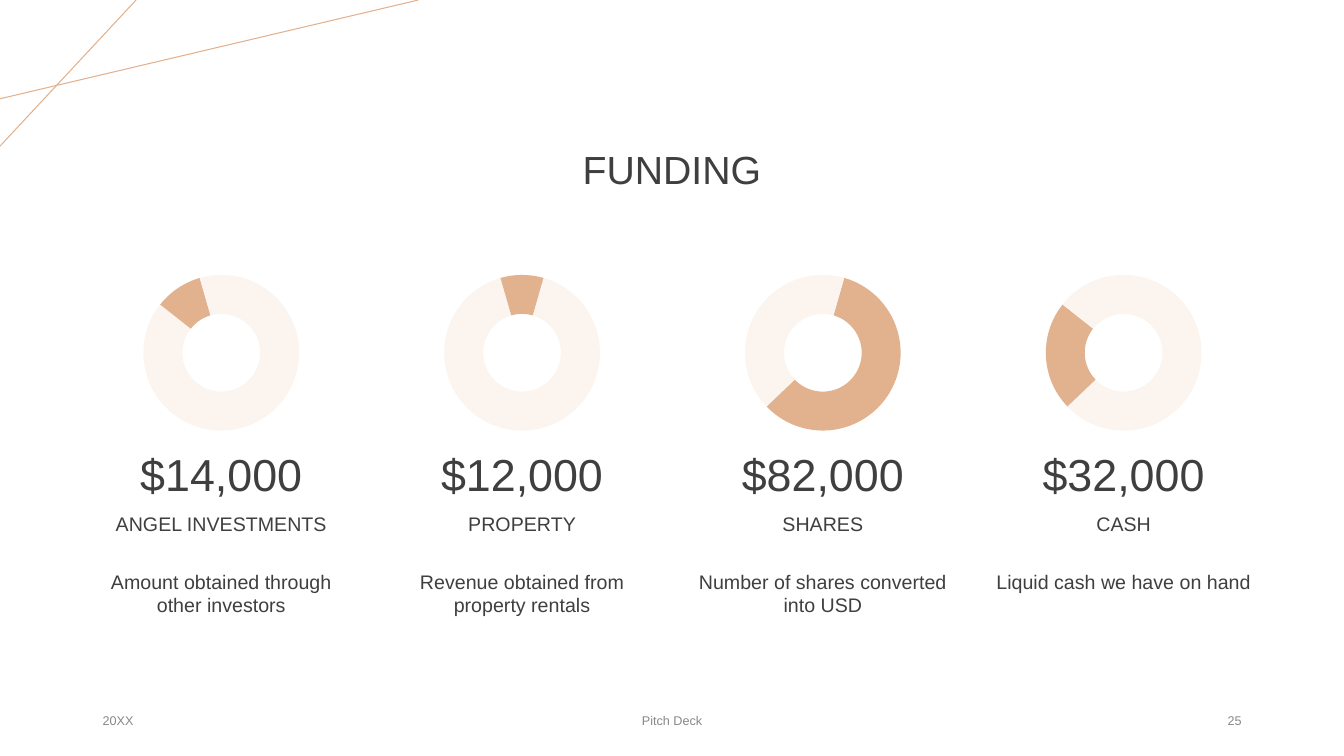
from dataclasses import dataclass

from lxml import etree
from pptx import Presentation
from pptx.chart.data import CategoryChartData
from pptx.dml.color import RGBColor
from pptx.enum.chart import XL_CHART_TYPE
from pptx.enum.shapes import MSO_CONNECTOR
from pptx.enum.text import MSO_ANCHOR, PP_ALIGN
from pptx.oxml.ns import qn
from pptx.util import Inches, Pt

DOUGHNUT = XL_CHART_TYPE.DOUGHNUT
STRAIGHT = MSO_CONNECTOR.STRAIGHT
TOP, MIDDLE, BOTTOM = MSO_ANCHOR.TOP, MSO_ANCHOR.MIDDLE, MSO_ANCHOR.BOTTOM
LEFT, CENTER, RIGHT = PP_ALIGN.LEFT, PP_ALIGN.CENTER, PP_ALIGN.RIGHT

COLORS = {
    "text": "3F3F3F",
    "footer": "888888",
    "line": "E2B08C",
    "slice": "E2B18D",
    "ring": "FBF4EF",
    "chart text": "000000",
}
FONT = "Arial"
WIDTH, HEIGHT = Inches(13.333), Inches(7.5)

# Lengths are percentages of the slide's width and height
FIRST_COLUMN, COLUMN_PITCH, COLUMN_WIDTH = 6.9, 22.38, 19.13
CHART_INDENT, CHART_TOP, CHART_WIDTH, CHART_HEIGHT = 1.95, 34.53, 15.23, 24.27
FOOTER_TOP, FOOTER_HEIGHT = 92.67, 5.33
FUNDING_SHARES = (59, 23, 10, 9)


@dataclass(frozen=True)
class Area:
    left: float
    top: float
    width: float
    height: float


@dataclass(frozen=True)
class TextStyle:
    size: int
    color: str = "text"
    align: PP_ALIGN = CENTER
    anchor: MSO_ANCHOR = MIDDLE
    spacing: float = 1.0
    side_inset: float = 0.1


@dataclass(frozen=True)
class CardRow:
    top: float
    height: float
    style: TextStyle


@dataclass(frozen=True)
class Source:
    highlight: int
    texts: tuple[str, str, str]


@dataclass(frozen=True)
class Footer:
    text: str
    left: float
    width: float
    align: PP_ALIGN


TITLE_STYLE = TextStyle(28, spacing=0.9)
CARD_ROWS = (
    CardRow(55.2, 11.73, TextStyle(32, anchor=BOTTOM, spacing=0.9, side_inset=0)),
    CardRow(65.07, 6.4, TextStyle(14, anchor=BOTTOM, spacing=0.9, side_inset=0)),
    CardRow(74.67, 12.4, TextStyle(14, anchor=TOP, side_inset=0)),
)
SOURCES = (
    Source(2, ("$14,000", "ANGEL INVESTMENTS", "Amount obtained through other investors")),
    Source(3, ("$12,000", "PROPERTY", "Revenue obtained from property rentals")),
    Source(0, ("$82,000", "SHARES", "Number of shares converted into USD")),
    Source(1, ("$32,000", "CASH", "Liquid cash we have on hand")),
)
FOOTERS = (
    Footer("20XX", 6.9, 22.5, LEFT),
    Footer("Pitch Deck", 33.13, 33.75, CENTER),
    Footer("25", 70.63, 22.5, RIGHT),
)
# Each corner line runs from the top edge to the left edge
CORNER_LINES = ((10.13, 19.33), (31.13, 13.07))


def across(percent: float) -> int:
    return round(WIDTH * percent / 100)


def down(percent: float) -> int:
    return round(HEIGHT * percent / 100)


def frame(area: Area) -> tuple[int, int, int, int]:
    return across(area.left), down(area.top), across(area.width), down(area.height)


def color(name: str) -> RGBColor:
    return RGBColor.from_string(COLORS[name])


def set_all(target, values: dict) -> None:
    for name, value in values.items():
        setattr(target, name, value)


def write(box, text: str, style: TextStyle) -> None:
    text_frame = box.text_frame
    set_all(text_frame, {
        "word_wrap": True,
        "vertical_anchor": style.anchor,
        "margin_left": Inches(style.side_inset),
        "margin_right": Inches(style.side_inset),
        "margin_top": Inches(0.05),
        "margin_bottom": Inches(0.05),
    })
    para = text_frame.paragraphs[0]
    set_all(para, {"alignment": style.align, "line_spacing": style.spacing})
    span = para.add_run()
    span.text = text
    set_all(span.font, {"name": FONT, "size": Pt(style.size)})
    span.font.color.rgb = color(style.color)


def add_text(page, area: Area, text: str, style: TextStyle) -> None:
    write(page.shapes.add_textbox(*frame(area)), text, style)


def add_corner_line(page, top_end: float, left_end: float) -> None:
    line = page.shapes.add_connector(STRAIGHT, across(top_end), 0, 0, down(left_end))
    line.line.color.rgb = color("line")
    line.line.width = Pt(0.75)
    etree.SubElement(line._element.spPr, qn("a:effectLst"))


def add_ring(page, area: Area, highlight: int) -> None:
    data = CategoryChartData()
    data.categories = [str(number + 1) for number in range(len(FUNDING_SHARES))]
    data.add_series("Series 1", FUNDING_SHARES)
    chart = page.shapes.add_chart(DOUGHNUT, *frame(area), data).chart
    set_all(chart, {"has_legend": False, "has_title": False})
    set_all(chart.font, {"name": FONT, "size": Pt(10)})
    chart.font.color.rgb = color("chart text")
    plot = chart.plots[0]
    set_all(plot, {"vary_by_categories": True, "has_data_labels": False})
    for index in range(len(FUNDING_SHARES)):
        piece = plot.series[0].points[index].format
        piece.fill.solid()
        piece.fill.fore_color.rgb = color("slice" if index == highlight else "ring")
        piece.line.fill.background()
    # Rotation and hole size
    ring = chart._chartSpace.find(".//" + qn("c:doughnutChart"))
    for tag, value in {"c:firstSliceAng": "16", "c:holeSize": "80"}.items():
        ring.find(qn(tag)).set("val", value)


def add_card(page, left: float, source: Source) -> None:
    chart_area = Area(left + CHART_INDENT, CHART_TOP, CHART_WIDTH, CHART_HEIGHT)
    add_ring(page, chart_area, source.highlight)
    for row, text in zip(CARD_ROWS, source.texts):
        add_text(page, Area(left, row.top, COLUMN_WIDTH, row.height), text, row.style)


def main() -> None:
    deck = Presentation()
    set_all(deck, {"slide_width": WIDTH, "slide_height": HEIGHT})
    page = deck.slides.add_slide(deck.slide_layouts[5])

    # Corner lines and title
    for top_end, left_end in CORNER_LINES:
        add_corner_line(page, top_end, left_end)
    title = page.shapes.title
    title_frame = frame(Area(15.45, 13.07, 69.08, 19.33))
    set_all(title, dict(zip(("left", "top", "width", "height"), title_frame)))
    write(title, "FUNDING", TITLE_STYLE)

    # One card per source of funding
    for column, source in enumerate(SOURCES):
        add_card(page, FIRST_COLUMN + column * COLUMN_PITCH, source)

    # Footer
    for footer in FOOTERS:
        area = Area(footer.left, FOOTER_TOP, footer.width, FOOTER_HEIGHT)
        add_text(page, area, footer.text, TextStyle(9, "footer", footer.align))

    deck.save("out.pptx")


if __name__ == "__main__":
    main()
